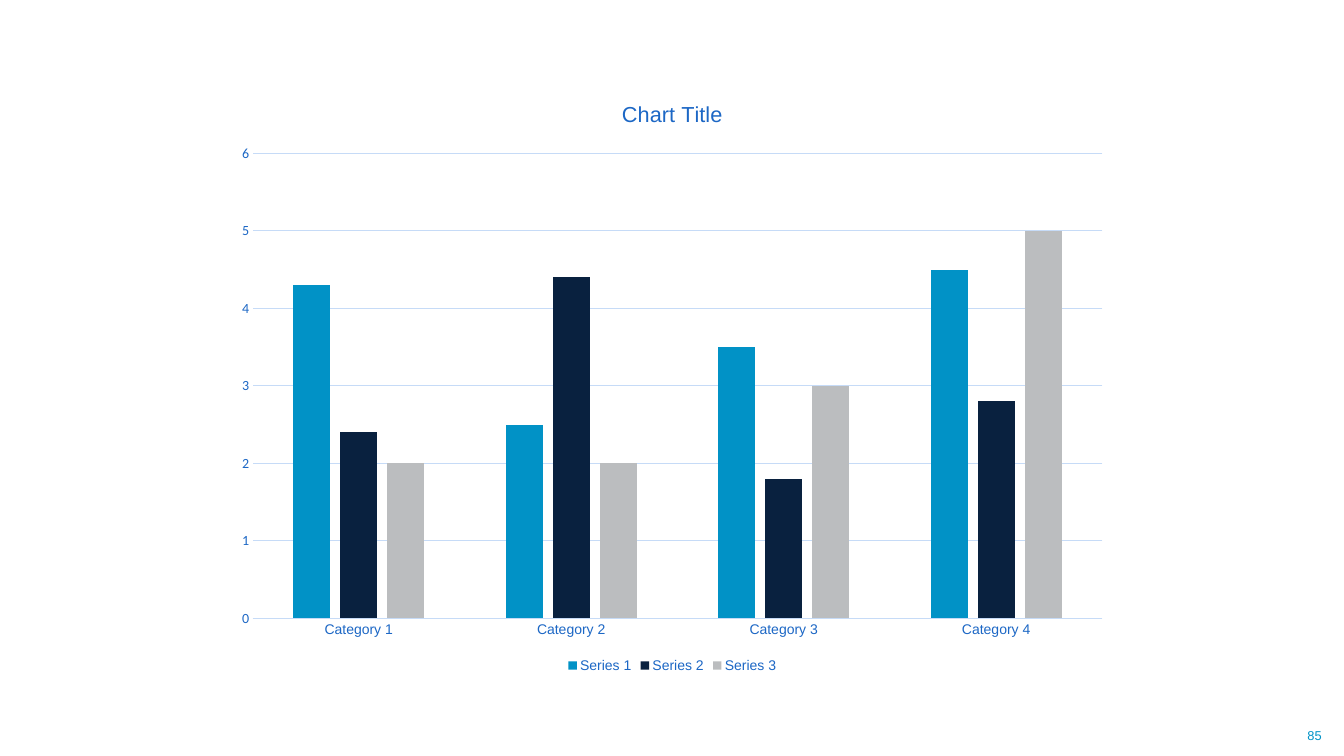
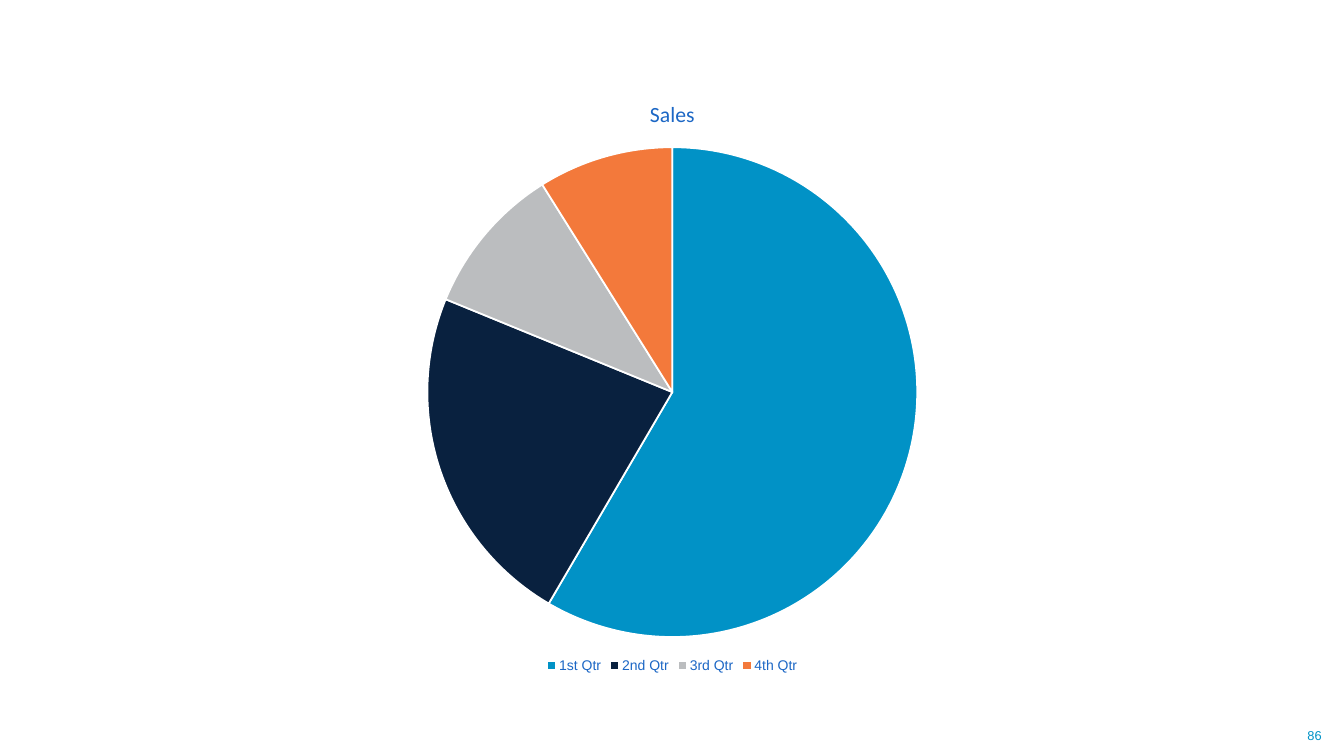
from pptx import Presentation
from pptx.chart.data import CategoryChartData
from pptx.dml.color import RGBColor
from pptx.enum.chart import XL_CHART_TYPE, XL_LEGEND_POSITION, XL_TICK_MARK
from pptx.enum.text import MSO_ANCHOR, PP_ALIGN
from pptx.util import Cm, Pt

COLUMN = XL_CHART_TYPE.COLUMN_CLUSTERED
PIE = XL_CHART_TYPE.PIE
BOTTOM = XL_LEGEND_POSITION.BOTTOM
NO_TICK = XL_TICK_MARK.NONE
MIDDLE = MSO_ANCHOR.MIDDLE
CENTER = PP_ALIGN.CENTER

COLORS = {
    "text": "1C67C5",
    "grid": "C6DBF7",
    "number": "0193C7",
    "cyan": "0192C6",
    "navy": "09213F",
    "gray": "BBBDBF",
    "orange": "F3793B",
    "white": "FFFFFF",
}
PALETTE = ["cyan", "navy", "gray", "orange"]

CHARTS = [
    {
        "number": "85",
        "type": COLUMN,
        "title": "Chart Title",
        "title_font": "Arial",
        "categories": ["Category 1", "Category 2", "Category 3", "Category 4"],
        "series": {
            "Series 1": [4.3, 2.5, 3.5, 4.5],
            "Series 2": [2.4, 4.4, 1.8, 2.8],
            "Series 3": [2, 2, 3, 5],
        },
    },
    {
        "number": "86",
        "type": PIE,
        "title": "Sales",
        "title_font": "Calibri",
        "categories": ["1st Qtr", "2nd Qtr", "3rd Qtr", "4th Qtr"],
        "series": {"Sales": [59, 23, 10, 9]},
    },
]


def set_font(font, name, size, color):
    font.name = name
    font.size = Pt(size)
    font.bold = False
    font.color.rgb = RGBColor.from_string(COLORS[color])


def set_line(line, color, width):
    line.color.rgb = RGBColor.from_string(COLORS[color])
    line.width = Pt(width)


presentation = Presentation()
presentation.slide_width = Cm(40.64)
presentation.slide_height = Cm(22.86)
blank_layout = presentation.slide_layouts[6]

for content in CHARTS:
    slide = presentation.slides.add_slide(blank_layout)

    number_box = slide.shapes.add_textbox(Cm(38.86), Cm(21.64), Cm(1.78), Cm(1.22))
    text_frame = number_box.text_frame
    text_frame.word_wrap = True
    text_frame.vertical_anchor = MIDDLE
    text_frame.text = content["number"]
    paragraph = text_frame.paragraphs[0]
    paragraph.alignment = CENTER
    set_font(paragraph.runs[0].font, "Arial", 11, "number")

    chart_data = CategoryChartData()
    chart_data.categories = content["categories"]
    for name, values in content["series"].items():
        chart_data.add_series(name, values)
    chart = slide.shapes.add_chart(
        content["type"], Cm(6.78), Cm(2.39), Cm(27.1), Cm(18.06), chart_data
    ).chart
    set_font(chart.font, "Calibri", 10, "navy")

    chart.has_title = True
    title_frame = chart.chart_title.text_frame
    title_frame.text = content["title"]
    set_font(title_frame.paragraphs[0].runs[0].font, content["title_font"], 18.6, "text")
    chart.chart_title.include_in_layout = False

    chart.has_legend = True
    chart.legend.position = BOTTOM
    chart.legend.include_in_layout = False
    set_font(chart.legend.font, "Arial", 12, "text")

    plot = chart.plots[0]
    if content["type"] == PIE:
        plot.vary_by_categories = True
        points = plot.series[0].points
        for index, color in enumerate(PALETTE):
            point_format = points[index].format
            point_format.fill.solid()
            point_format.fill.fore_color.rgb = RGBColor.from_string(COLORS[color])
            set_line(point_format.line, "white", 1.5)
        continue

    plot.vary_by_categories = False
    plot.gap_width = 219
    plot.overlap = -27
    for series, color in zip(plot.series, PALETTE):
        series.format.fill.solid()
        series.format.fill.fore_color.rgb = RGBColor.from_string(COLORS[color])

    for axis, font_name in ((chart.category_axis, "Arial"), (chart.value_axis, "Calibri")):
        axis.major_tick_mark = NO_TICK
        axis.minor_tick_mark = NO_TICK
        set_font(axis.tick_labels.font, font_name, 12, "text")
    set_line(chart.category_axis.format.line, "grid", 0.75)
    value_axis = chart.value_axis
    value_axis.minimum_scale = 0
    value_axis.maximum_scale = 6
    value_axis.major_unit = 1
    value_axis.format.line.fill.background()
    value_axis.has_major_gridlines = True
    set_line(value_axis.major_gridlines.format.line, "grid", 0.75)

presentation.save("out.pptx")
